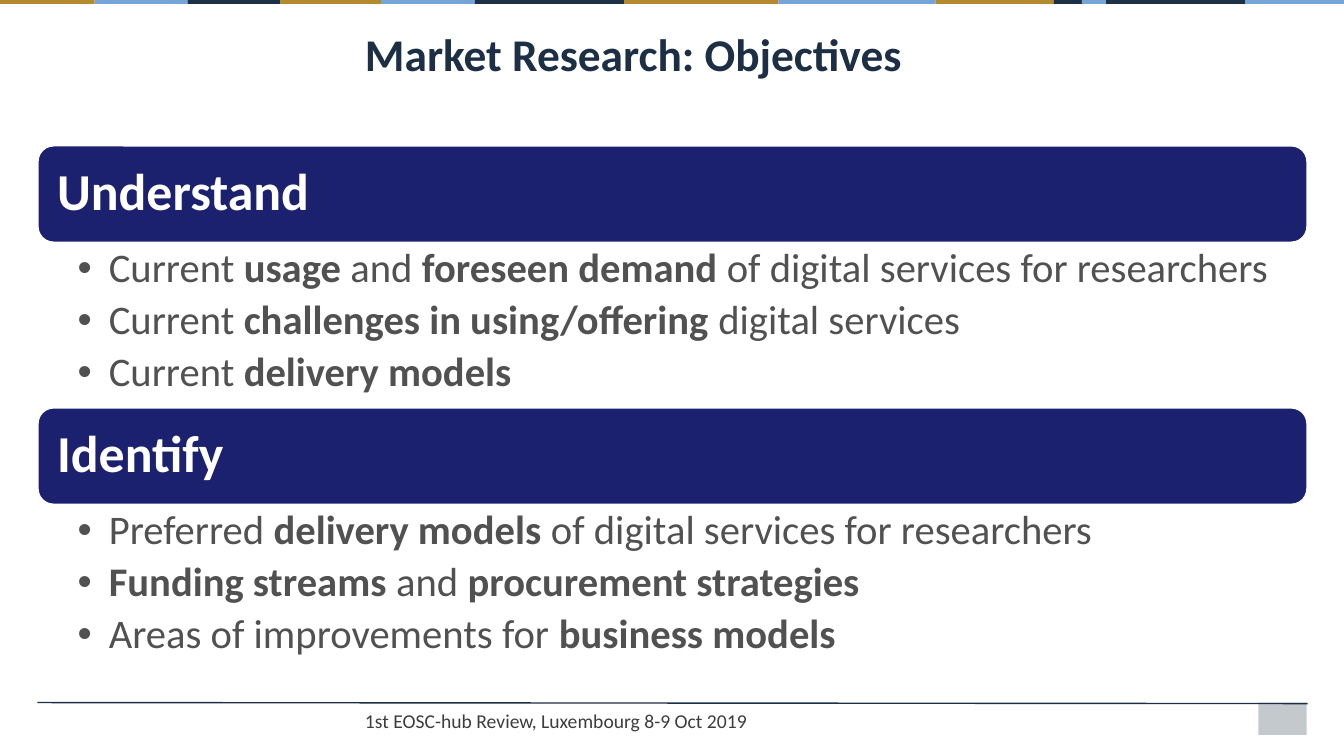
"""Build the market research objectives slide."""
from lxml import etree
from pptx import Presentation
from pptx.dml.color import RGBColor
from pptx.enum.shapes import MSO_CONNECTOR, MSO_SHAPE
from pptx.enum.text import MSO_ANCHOR, MSO_AUTO_SIZE, PP_ALIGN
from pptx.oxml.ns import qn
from pptx.util import Inches, Pt

RECT, ROUND = MSO_SHAPE.RECTANGLE, MSO_SHAPE.ROUNDED_RECTANGLE
LINE = MSO_CONNECTOR.STRAIGHT
TOP, MIDDLE = MSO_ANCHOR.TOP, MSO_ANCHOR.MIDDLE
LEFT = PP_ALIGN.LEFT
FIXED = MSO_AUTO_SIZE.NONE
WHITE = RGBColor(0xFF, 0xFF, 0xFF)
NAVY = RGBColor(0x1C, 0x30, 0x46)
GOLD = RGBColor(0xB5, 0x89, 0x2D)
BLUE = RGBColor(0x75, 0xA5, 0xD8)
INK = RGBColor(0x1D, 0x2F, 0x45)
INDIGO = RGBColor(0x1B, 0x21, 0x6E)
GREY = RGBColor(0x51, 0x51, 0x51)
DARK = RGBColor(0x3D, 0x3D, 0x3D)

EDGES = [0, 0.94, 1.86, 2.78, 3.78, 4.71, 6.19, 7.72, 9.28,
         10.45, 10.73, 10.97, 12.35, 13.33]
TINTS = [GOLD, BLUE, NAVY, GOLD, BLUE, NAVY, GOLD, BLUE, GOLD,
         NAVY, BLUE, NAVY, BLUE]
PARTS = [
    ("Understand", [
        "Current *usage* and *foreseen demand* of digital services for researchers",
        "Current *challenges in using/offering* digital services",
        "Current *delivery models*"]),
    ("Identify", [
        "Preferred *delivery models* of digital services for researchers",
        "*Funding streams* and *procurement strategies*",
        "Areas of improvements for *business models*"]),
]
FRAME = {"word_wrap": True, "auto_size": FIXED, "vertical_anchor": TOP}
HEAD = {"name": "Calibri", "size": Pt(37), "bold": True}
BODY = {"name": "Calibri", "size": Pt(29)}


def block(kind, left, top, width, height, fill):
    shape = slide.shapes.add_shape(
        kind, Inches(left), Inches(top), Inches(width), Inches(height))
    shape.shadow.inherit = False
    shape.fill.solid()
    shape.fill.fore_color.rgb = fill
    shape.line.fill.background()
    return shape


def style(item, values, color=None):
    for key, value in values.items():
        setattr(item, key, value)
    if color is not None:
        item.color.rgb = color


deck = Presentation()
deck.slide_width, deck.slide_height = Inches(13.33), Inches(7.5)
slide = deck.slides.add_slide(deck.slide_layouts[5])

for left, right, tint in zip(EDGES, EDGES[1:], TINTS):
    block(RECT, left, 0, right - left, 0.04, tint)

corner = block(RECT, 12.48, 6.97, 0.48, 0.32, INK)
shade = corner.fill._xPr.find(".//" + qn("a:srgbClr"))
etree.SubElement(shade, qn("a:alpha"), val="26000")

rule = slide.shapes.add_connector(
    LINE, Inches(12.97), Inches(6.98), Inches(0.37), Inches(6.97))
rule.line.color.rgb = INK
rule.line.width = Pt(1)
etree.SubElement(rule._element.spPr, qn("a:effectLst"))

title = slide.shapes.title
style(title, {"left": Inches(3.52), "top": Inches(0.21),
              "width": Inches(9.45), "height": Inches(0.59)})
style(title.text_frame, FRAME)
title.text_frame.text = "Market Research: Objectives"
para = title.text_frame.paragraphs[0]
para.alignment = LEFT
style(para.runs[0].font, HEAD | {"size": Pt(32.4)}, INK)

for index, (label, points) in enumerate(PARTS):
    top = 1.44 + 2.6 * index
    bar = block(ROUND, 0.37, top, 12.6, 0.97, INDIGO)
    bar.line.color.rgb = WHITE
    bar.line.width = Pt(2)
    style(bar.text_frame, FRAME | {
        "vertical_anchor": MIDDLE, "margin_left": Inches(0.15)})
    bar.text_frame.text = label
    para = bar.text_frame.paragraphs[0]
    style(para, {"alignment": LEFT, "line_spacing": 0.9})
    style(para.runs[0].font, HEAD, WHITE)

    box = slide.shapes.add_textbox(
        Inches(0.37), Inches(top + 0.97), Inches(12.6), Inches(1.63))
    style(box.text_frame, FRAME | {
        "margin_left": Inches(0.4), "margin_right": Inches(0.29)})
    for row, point in enumerate(points):
        para = box.text_frame.add_paragraph() if row else box.text_frame.paragraphs[0]
        style(para, {"level": 1, "line_spacing": 0.9, "space_after": Pt(5.8)})
        props = para._p.get_or_add_pPr()
        props.set("marL", str(Inches(0.31)))
        props.set("indent", str(-Inches(0.31)))
        etree.SubElement(props, qn("a:buFont"), typeface="Arial")
        etree.SubElement(props, qn("a:buChar"), char="•")
        for turn, words in enumerate(point.split("*")):
            if words:
                run = para.add_run()
                run.text = words
                style(run.font, BODY | {"bold": turn % 2 == 1}, GREY)

foot = slide.shapes.add_textbox(
    Inches(3.52), Inches(6.98), Inches(5.98), Inches(0.31))
style(foot.text_frame, FRAME)
foot.text_frame.text = "1st EOSC-hub Review, Luxembourg 8-9 Oct 2019"
style(foot.text_frame.paragraphs[0].runs[0].font, BODY | {"size": Pt(14)}, DARK)

deck.save("out.pptx")
